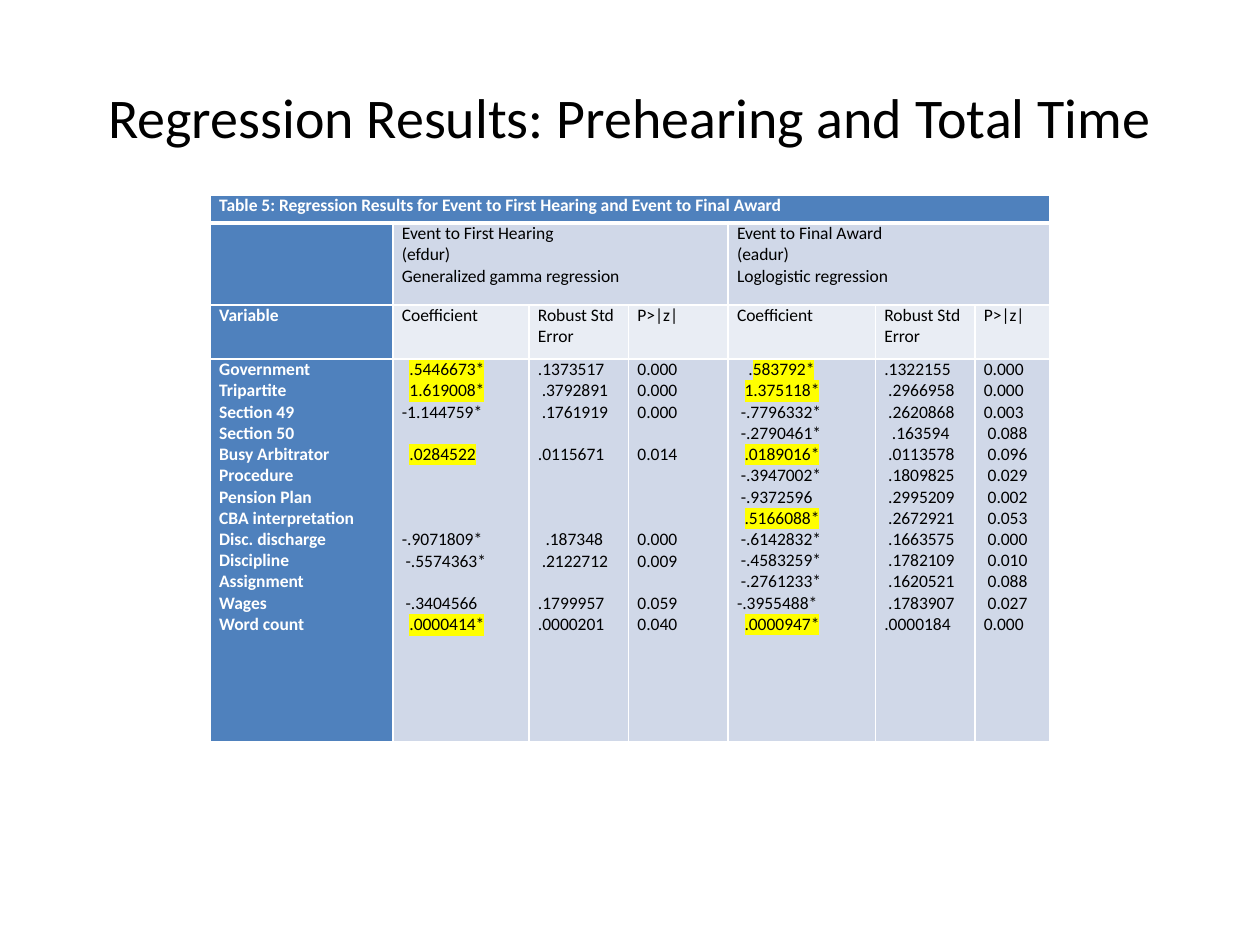
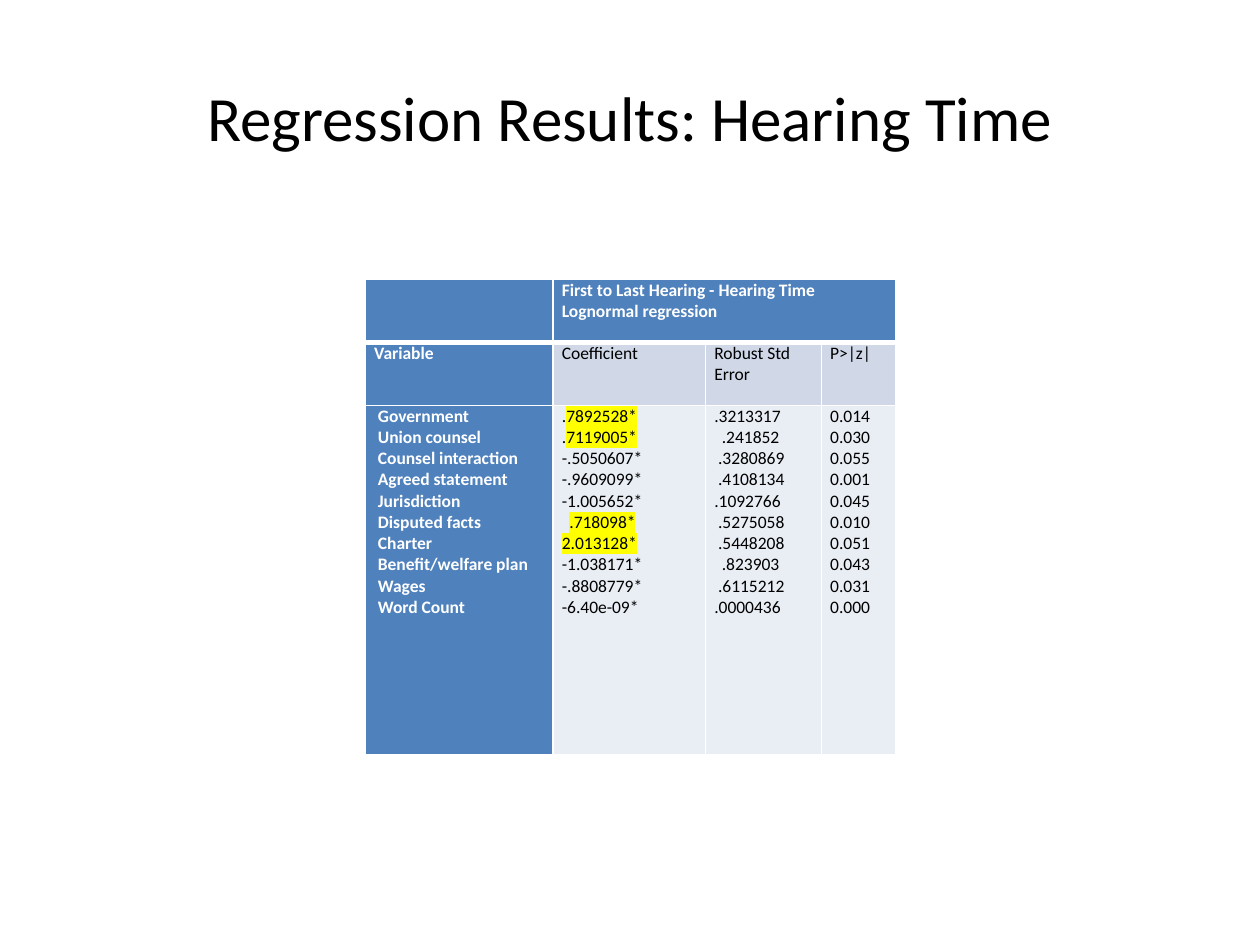
from dataclasses import dataclass

import pptx
import pptx.dml.color
import pptx.enum.text
import pptx.oxml.ns
import pptx.presentation
import pptx.slide
import pptx.table
import pptx.text.text
import pptx.util
from lxml import etree

Inches, Pt = pptx.util.Inches, pptx.util.Pt
qn = pptx.oxml.ns.qn


@dataclass(frozen=True)
class Theme:
    font: str = "Calibri"
    text: str = "000000"
    light: str = "FFFFFF"
    head: str = "4F81BD"
    bands: tuple[str, str] = ("E9EDF4", "D0D8E8")
    highlight: str = "FFFF00"
    cell_size: float = 10
    line_height: float = 12.2
    pad: float = 0.03
    rule: float = 1
    heavy_rule: float = 3


THEME = Theme()


@dataclass(frozen=True)
class Span:
    row: int
    first: int
    last: int


@dataclass(frozen=True)
class ResultSlide:
    title: str
    title_size: float
    left: float
    top: float
    widths: list[float]
    heights: list[float]
    header: list[list[str]]
    spans: list[Span]
    results: list[tuple[str, ...]]


# In cell text each leading "~" is one step of indent and [..] is highlighted.
MEASURES = ["Coefficient", "Robust Std Error", "P>|z|"]

PREHEARING = ResultSlide(
    title="Regression Results: Prehearing and Total Time", title_size=32,
    left=1.67, top=1.55,
    widths=[1.45, 1.08, 0.79, 0.79, 1.17, 0.79, 0.59],
    heights=[0.22, 0.65, 0.43, 3.04],
    header=[
        ["Table 5: Regression Results for Event to First Hearing and "
         "Event to Final Award"] + [""] * 6,
        ["", "Event to First Hearing\n(efdur)\nGeneralized gamma regression", "", "",
         "Event to Final Award\n(eadur)\nLoglogistic regression", "", ""],
        ["Variable"] + MEASURES * 2,
    ],
    spans=[Span(0, 0, 6), Span(1, 1, 3), Span(1, 4, 6)],
    results=[
        ("Government", "~~[.5446673*]", ".1373517", "0.000",
         "~~~.[583792*]", ".1322155", "0.000"),
        ("Tripartite", "~~[1.619008*]", "~.3792891", "0.000",
         "~~[1.375118*]", "~.2966958", "0.000"),
        ("Section 49", "-1.144759*", "~.1761919", "0.000",
         "~-.7796332*", "~.2620868", "0.003"),
        ("Section 50", "", "", "", "~-.2790461*", "~~.163594", "~0.088"),
        ("Busy Arbitrator", "~~[.0284522]", ".0115671", "0.014",
         "~~[.0189016*]", "~.0113578", "~0.096"),
        ("Procedure", "", "", "", "~-.3947002*", "~.1809825", "~0.029"),
        ("Pension Plan", "", "", "", "~-.9372596", "~.2995209", "~0.002"),
        ("CBA interpretation", "", "", "", "~~[.5166088*]", "~.2672921", "~0.053"),
        ("Disc. discharge", "-.9071809*", "~~.187348", "0.000",
         "~-.6142832*", "~.1663575", "~0.000"),
        ("Discipline", "~-.5574363*", "~.2122712", "0.009",
         "~-.4583259*", "~.1782109", "~0.010"),
        ("Assignment", "", "", "", "~-.2761233*", "~.1620521", "~0.088"),
        ("Wages", "~-.3404566", ".1799957", "0.059",
         "-.3955488*", "~.1783907", "~0.027"),
        ("Word count", "~~[.0000414*]", ".0000201", "0.040",
         "~~[.0000947*]", ".0000184", "0.000"),
    ],
)

HEARING = ResultSlide(
    title="Regression Results: Hearing Time", title_size=36,
    left=2.9, top=2.22,
    widths=[1.49, 1.21, 0.92, 0.59],
    heights=[0.5, 0.5, 2.77],
    header=[
        ["", "First to Last Hearing - Hearing Time\nLognormal regression", "", ""],
        ["Variable"] + MEASURES,
    ],
    spans=[Span(0, 1, 3)],
    results=[
        ("~Government", ".[7892528*]", ".3213317", "0.014"),
        ("~Union counsel", ".[7119005*]", "~~.241852", "0.030"),
        ("~Counsel interaction", "-.5050607*", "~.3280869", "0.055"),
        ("~Agreed statement", "-.9609099*", "~.4108134", "0.001"),
        ("~Jurisdiction", "-1.005652*", ".1092766", "0.045"),
        ("~Disputed facts", "~~[.718098*]", "~.5275058", "0.010"),
        ("~Charter", "[2.013128*]", "~.5448208", "0.051"),
        ("~Benefit/welfare plan", "-1.038171*", "~~.823903", "0.043"),
        ("~Wages", "-.8808779*", "~.6115212", "0.031"),
        ("~Word Count", "-6.40e-09*", ".0000436", "0.000"),
    ],
)


def rgb(value: str) -> pptx.dml.color.RGBColor:
    return pptx.dml.color.RGBColor.from_string(value)


def put(target: object, values: dict[str, object]) -> None:
    for name, value in values.items():
        setattr(target, name, value)


def add_run(p: pptx.text.text._Paragraph, text: str, size: float, color: str,
            bold: bool = False, marked: bool = False) -> None:
    r = p.add_run()
    r.text = text
    put(r.font, {"name": THEME.font, "size": Pt(size), "bold": bold})
    r.font.color.rgb = rgb(color)
    if marked:
        mark = etree.Element(qn("a:highlight"))
        etree.SubElement(mark, qn("a:srgbClr"), val=THEME.highlight)
        r._r.rPr.find(qn("a:solidFill")).addnext(mark)


def add_title(s: pptx.slide.Slide, text: str, size: float) -> None:
    tf = s.shapes.add_textbox(Inches(0.5), Inches(0.3), Inches(9), Inches(1.25)).text_frame
    put(tf, {"word_wrap": True, "vertical_anchor": pptx.enum.text.MSO_ANCHOR.MIDDLE})
    p = tf.paragraphs[0]
    p.alignment = pptx.enum.text.PP_ALIGN.CENTER
    add_run(p, text, size, THEME.text)


def set_borders(cell: pptx.table._Cell, row: int) -> None:
    """White rules, with a heavy one under the first row."""
    heavy = {(0, "lnB"), (1, "lnT")}
    tcPr = cell._tc.get_or_add_tcPr()
    for i, side in enumerate(("lnL", "lnR", "lnT", "lnB")):
        width = THEME.heavy_rule if (row, side) in heavy else THEME.rule
        line = etree.Element(qn(f"a:{side}"), w=str(Pt(width)))
        fill = etree.SubElement(line, qn("a:solidFill"))
        etree.SubElement(fill, qn("a:srgbClr"), val=THEME.light)
        tcPr.insert(i, line)


def fill_text(cell: pptx.table._Cell, text: str, is_head: bool) -> None:
    """Write one paragraph a line; a skipped line becomes space before the next."""
    tf = cell.text_frame
    p, gap = tf.paragraphs[0], 0
    if not text:
        etree.SubElement(p._p, qn("a:endParaRPr"), sz=str(THEME.cell_size * 100))
        return
    color = THEME.light if is_head else THEME.text
    started = False
    for line in text.split("\n"):
        body = line.lstrip("~")
        if not body:
            gap += 1
            continue
        if started:
            p = tf.add_paragraph()
        indent = Inches(THEME.pad * (len(line) - len(body)))
        put_indent = {"marL": str(indent), "indent": "0"}
        for name, value in put_indent.items():
            p._p.get_or_add_pPr().set(name, value)
        if started and gap:
            p.space_before = Pt(THEME.line_height * gap)
        for i, part in enumerate(body.replace("]", "[").split("[")):
            if part:
                add_run(p, part, THEME.cell_size, color, is_head, i % 2 == 1)
        started, gap = True, 0


def add_results(s: pptx.slide.Slide, data: ResultSlide) -> None:
    body = ["\n".join(column) for column in zip(*data.results)]
    rows = data.header + [body]
    table = s.shapes.add_table(
        len(rows), len(data.widths), Inches(data.left), Inches(data.top),
        Inches(sum(data.widths)), Inches(sum(data.heights))).table
    put(table, {"first_row": False, "horz_banding": False})
    for column, width in zip(table.columns, data.widths):
        column.width = Inches(width)
    for row, height in zip(table.rows, data.heights):
        row.height = Inches(height)

    # First row and first column are headings; the rest alternates by row
    for i, texts in enumerate(rows):
        for j, text in enumerate(texts):
            cell = table.cell(i, j)
            is_head = i == 0 or j == 0
            put(cell, {"margin_left": Inches(0.07), "margin_right": Inches(0.07),
                       "margin_top": 0, "margin_bottom": 0})
            cell.fill.solid()
            cell.fill.fore_color.rgb = rgb(THEME.head if is_head else THEME.bands[i % 2])
            set_borders(cell, i)
            fill_text(cell, text, is_head)
    for span in data.spans:
        table.cell(span.row, span.first).merge(table.cell(span.row, span.last))


def main() -> None:
    prs = pptx.Presentation()
    put(prs, {"slide_width": Inches(10), "slide_height": Inches(7.5)})
    for data in (PREHEARING, HEARING):
        s = prs.slides.add_slide(prs.slide_layouts[6])
        add_title(s, data.title, data.title_size)
        add_results(s, data)
    prs.save("out.pptx")


if __name__ == "__main__":
    main()
